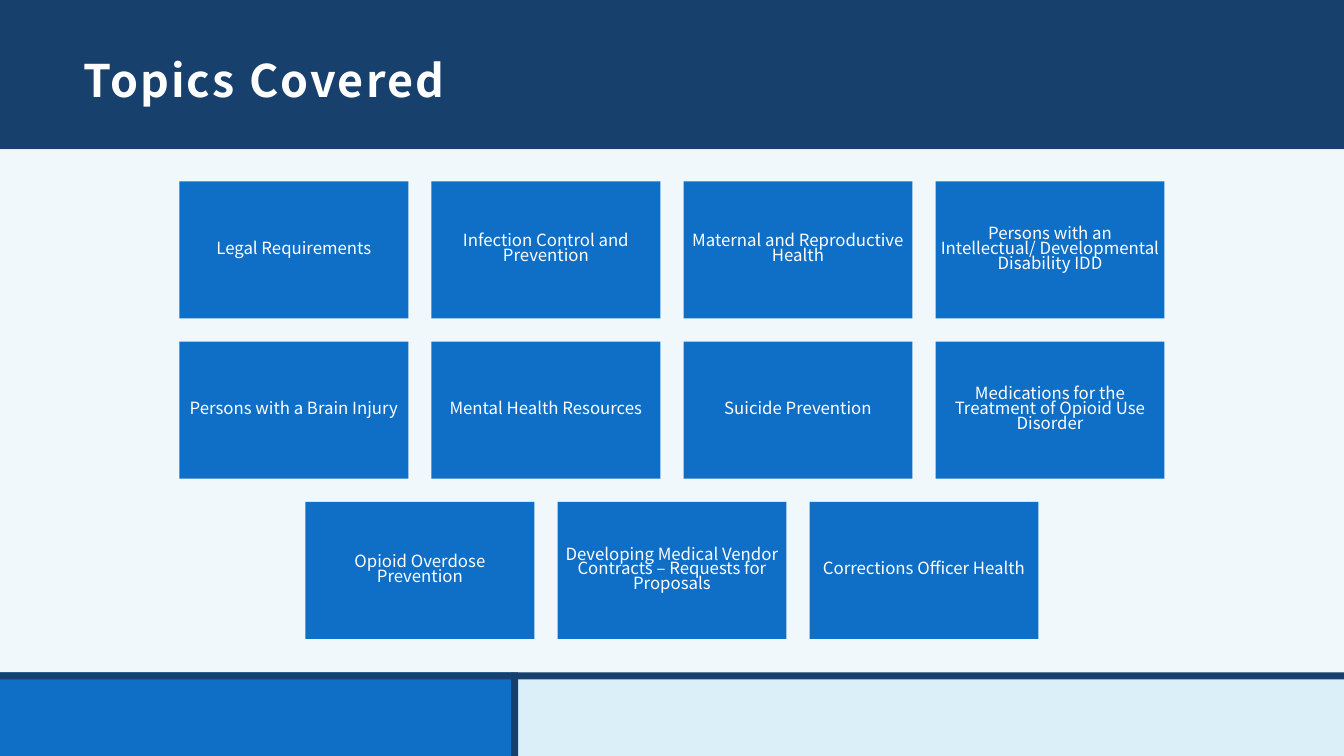
"""Build the Topics Covered slide: a title band, a centred grid of topics and a footer."""
from lxml import etree
from pptx import Presentation
from pptx import util as u
from pptx.dml.color import RGBColor
from pptx.enum import shapes, text
from pptx.oxml.ns import qn

NAVY = RGBColor(0x17, 0x40, 0x6D)
BLUE = RGBColor(0x0F, 0x6F, 0xC6)
PALE = RGBColor(0xDB, 0xEF, 0xF9)
WHITE = RGBColor(0xFF, 0xFF, 0xFF)
FONT = "Noto Sans CJK JP"

WIDTH, HEIGHT = 13.33, 7.5
HEADER_HEIGHT = 1.48
FOOTER_TOP = 6.67
FOOTER_SPLIT = 5.07
RULE = 0.07
BOX_WIDTH, BOX_HEIGHT, GAP = 2.27, 1.36, 0.23
GRID_TOP = 1.8

TOPIC_ROWS = [
    ["Legal Requirements", "Infection Control and Prevention",
     "Maternal and Reproductive Health",
     "Persons with an Intellectual/ Developmental Disability IDD"],
    ["Persons with a Brain Injury", "Mental Health Resources", "Suicide Prevention",
     "Medications for the Treatment of Opioid Use Disorder"],
    ["Opioid Overdose Prevention",
     "Developing Medical Vendor Contracts – Requests for Proposals",
     "Corrections Officer Health"],
]

presentation = Presentation()
presentation.slide_width = u.Inches(WIDTH)
presentation.slide_height = u.Inches(HEIGHT)
slide = presentation.slides.add_slide(presentation.slide_layouts[6])
slide.background.fill.solid()
slide.background.fill.fore_color.rgb = PALE


def add_rectangle(left, top, width, height, color):
    """Add a plain filled rectangle, measured in inches."""
    shape = slide.shapes.add_shape(
        shapes.MSO_SHAPE.RECTANGLE, *map(u.Inches, (left, top, width, height)))
    shape.shadow.inherit = False
    shape.fill.solid()
    shape.fill.fore_color.rgb = color
    shape.line.fill.background()
    return shape


def write(shape, words, *, size, insets, align, bold=False, line_spacing=1.0):
    """Put one formatted paragraph in a shape and return its run."""
    frame = shape.text_frame
    frame.word_wrap = True
    frame.vertical_anchor = text.MSO_ANCHOR.MIDDLE
    frame.margin_left, frame.margin_top, frame.margin_right, frame.margin_bottom = map(
        u.Inches, insets)
    paragraph = frame.paragraphs[0]
    paragraph.alignment = align
    paragraph.line_spacing = line_spacing
    run = paragraph.add_run()
    run.text = words
    run.font.name = FONT
    run.font.size = u.Pt(size)
    run.font.bold = bold
    run.font.color.rgb = WHITE
    return run


add_rectangle(0, 0, WIDTH, HEADER_HEIGHT, NAVY)
body = add_rectangle(0, HEADER_HEIGHT, WIDTH, FOOTER_TOP - HEADER_HEIGHT, WHITE)
body_color = body.fill._xPr.find(qn("a:solidFill"))[0]
etree.SubElement(body_color, qn("a:alpha")).set("val", "60000")

add_rectangle(0, FOOTER_TOP, FOOTER_SPLIT, HEIGHT - FOOTER_TOP, BLUE)
add_rectangle(0, FOOTER_TOP, WIDTH, RULE, NAVY)
add_rectangle(FOOTER_SPLIT, FOOTER_TOP, RULE, HEIGHT - FOOTER_TOP, NAVY)

title = slide.shapes.add_textbox(*map(u.Inches, (0.71, 0.1, 11.92, 1.28)))
title_run = write(title, "Topics Covered", size=32, bold=True,
                  insets=(0.12, 0.2, 0.12, 0.1), align=text.PP_ALIGN.LEFT)
title_run.font._element.set("spc", "150")

for row, topics in enumerate(TOPIC_ROWS):
    row_width = len(topics) * (BOX_WIDTH + GAP) - GAP
    row_left = (WIDTH - row_width) / 2
    for column, topic in enumerate(topics):
        box = add_rectangle(row_left + column * (BOX_WIDTH + GAP),
                            GRID_TOP + row * (BOX_HEIGHT + GAP),
                            BOX_WIDTH, BOX_HEIGHT, BLUE)
        write(box, topic, size=12, insets=(0.05,) * 4,
              align=text.PP_ALIGN.CENTER, line_spacing=0.74)

presentation.save("out.pptx")
